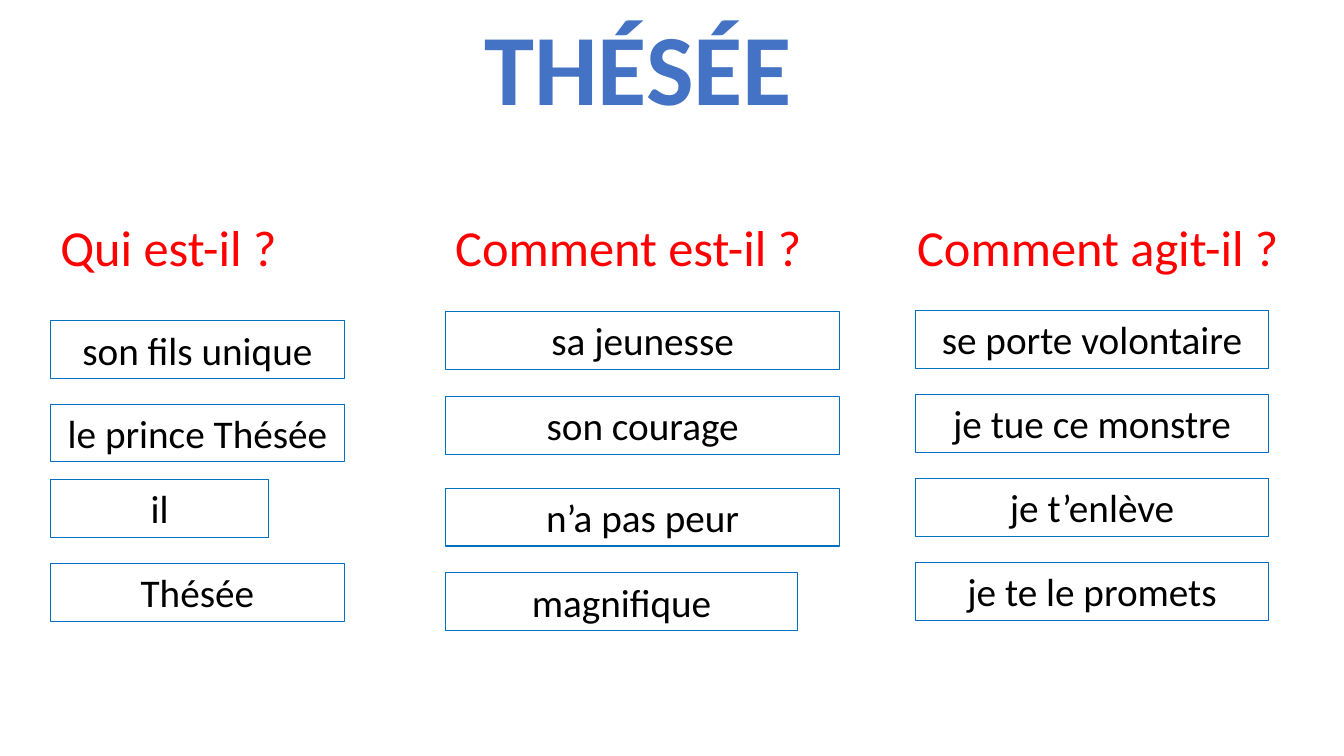
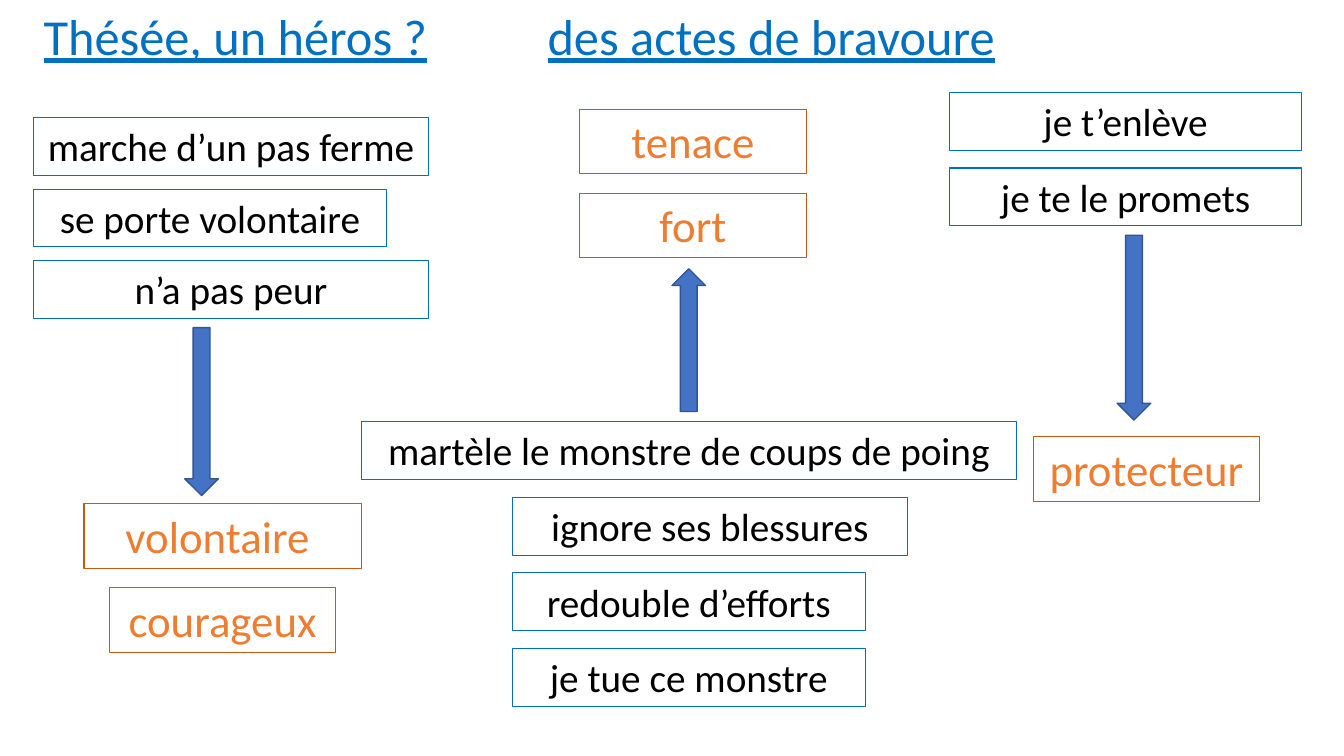
import pptx
import pptx.util
import pptx.dml.color
import pptx.enum.shapes
import pptx.enum.text

COLS, ROWS = 160, 90
COLORS = {
    "title": "4472C4", "question": "FF0000", "heading": "0070C0",
    "quote": "000000", "quote_line": "0070C0",
    "trait": "ED7D31", "trait_line": "C55A11",
    "arrow": "4472C4", "arrow_line": "325491",
}
CENTER = pptx.enum.text.PP_ALIGN.CENTER
LEFT = pptx.enum.text.PP_ALIGN.LEFT
# Each style: height in rows, alignment and font format
STYLES = {
    "title": (15.7, CENTER, {"size": 72, "bold": True}),
    "question": (8.5, LEFT, {"size": 36}),
    "heading": (8.5, LEFT, {"size": 36, "underline": True}),
    "quote": (6.9, CENTER, {"size": 28}),
    "trait": (7.7, CENTER, {"size": 32}),
}

prs = pptx.Presentation()
prs.slide_width = pptx.util.Inches(13.33)
prs.slide_height = pptx.util.Inches(7.5)


def grid(col, row, width, height):
    """Turn grid columns and rows into slide lengths."""
    dx, dy = prs.slide_width / COLS, prs.slide_height / ROWS
    return [int(n) for n in (col * dx, row * dy, width * dx, height * dy)]


def add_text(slide, style, col, row, width, text):
    """Add a text box, outlined if its style has a line colour."""
    height, align, font = STYLES[style]
    sp = slide.shapes.add_textbox(*grid(col, row, width, height))
    if style + "_line" in COLORS:
        sp.line.color.rgb = pptx.dml.color.RGBColor.from_string(COLORS[style + "_line"])
        sp.line.width = pptx.util.Pt(0.75)
    tf = sp.text_frame
    tf.word_wrap = True
    tf.auto_size = pptx.enum.text.MSO_AUTO_SIZE.SHAPE_TO_FIT_TEXT
    p = tf.paragraphs[0]
    p.alignment = align
    r = p.add_run()
    r.text = text
    formats = {**font, "name": "Calibri", "size": pptx.util.Pt(font["size"])}
    for name, value in formats.items():
        setattr(r.font, name, value)
    r.font.color.rgb = pptx.dml.color.RGBColor.from_string(COLORS[style])


# Slide 1: three questions, each with its quotes
blank = prs.slide_layouts[6]
slide = prs.slides.add_slide(blank)
add_text(slide, "title", 48, 0, 56, "THÉSÉE")

# Question column and width, quote column, then (row, width, text) quotes
questions = [
    ("Qui est-il ?", 6, 35, 6, [
        (38.2, 35, "son fils unique"), (48.1, 35, "le prince Thésée"),
        (57.1, 26, "il"), (67.1, 35, "Thésée")]),
    ("Comment est-il ?", 53, 48, 53, [
        (37.1, 47, "sa jeunesse"), (47.2, 47, "son courage"),
        (58.1, 47, "n’a pas peur"), (68.2, 42, "magnifique")]),
    ("Comment agit-il ?", 108, 48, 109, [
        (37, 42, "se porte volontaire"), (47, 42, "je tue ce monstre"),
        (57, 42, "je t’enlève"), (67, 42, "je te le promets")]),
]
for question, col, width, quote_col, quotes in questions:
    add_text(slide, "question", col, 25.1, width, question)
    for row, quote_width, text in quotes:
        add_text(slide, "quote", quote_col, row, quote_width, text)

# Slide 2: brave acts lead to character traits
slide = prs.slides.add_slide(blank)
for col, text in [(4, "Thésée, un héros ?"), (64, "des actes de bravoure")]:
    add_text(slide, "heading", col, 0, 96, text)

# Style, first row, row step, then (column, width, text) boxes
stacks = [
    ("quote", 14, 8.5, [(4, 47, "marche d’un pas ferme"),
                        (4, 42, "se porte volontaire"),
                        (4, 47, "n’a pas peur")]),
    ("trait", 60, 10, [(10, 33, "volontaire "), (13, 27, "courageux")]),
    ("trait", 13, 10, [(69, 27, "tenace"), (69, 27, "fort")]),
    ("quote", 50.2, 9, [(43, 78, "martèle le monstre de coups de poing"),
                        (61, 47, "ignore ses blessures"),
                        (61, 42, "redouble d’efforts"),
                        (61, 42, "je tue ce monstre")]),
    ("quote", 11, 9, [(113, 42, "je t’enlève"), (113, 42, "je te le promets")]),
    ("trait", 52, 10, [(123, 27, "protecteur")]),
]
for style, first_row, step, boxes in stacks:
    for i, (col, width, text) in enumerate(boxes):
        add_text(slide, style, col, first_row + i * step, width, text)

arrow_kinds = pptx.enum.shapes.MSO_SHAPE
arrows = [
    (arrow_kinds.DOWN_ARROW, 22, 39, 20),
    (arrow_kinds.UP_ARROW, 80, 32, 17),
    (arrow_kinds.DOWN_ARROW, 133, 28, 22),
]
for kind, col, row, height in arrows:
    sp = slide.shapes.add_shape(kind, *grid(col, row, 4, height))
    sp.shadow.inherit = False
    sp.fill.solid()
    sp.fill.fore_color.rgb = pptx.dml.color.RGBColor.from_string(COLORS["arrow"])
    sp.line.color.rgb = pptx.dml.color.RGBColor.from_string(COLORS["arrow_line"])
    sp.line.width = pptx.util.Pt(1)

prs.save("out.pptx")
